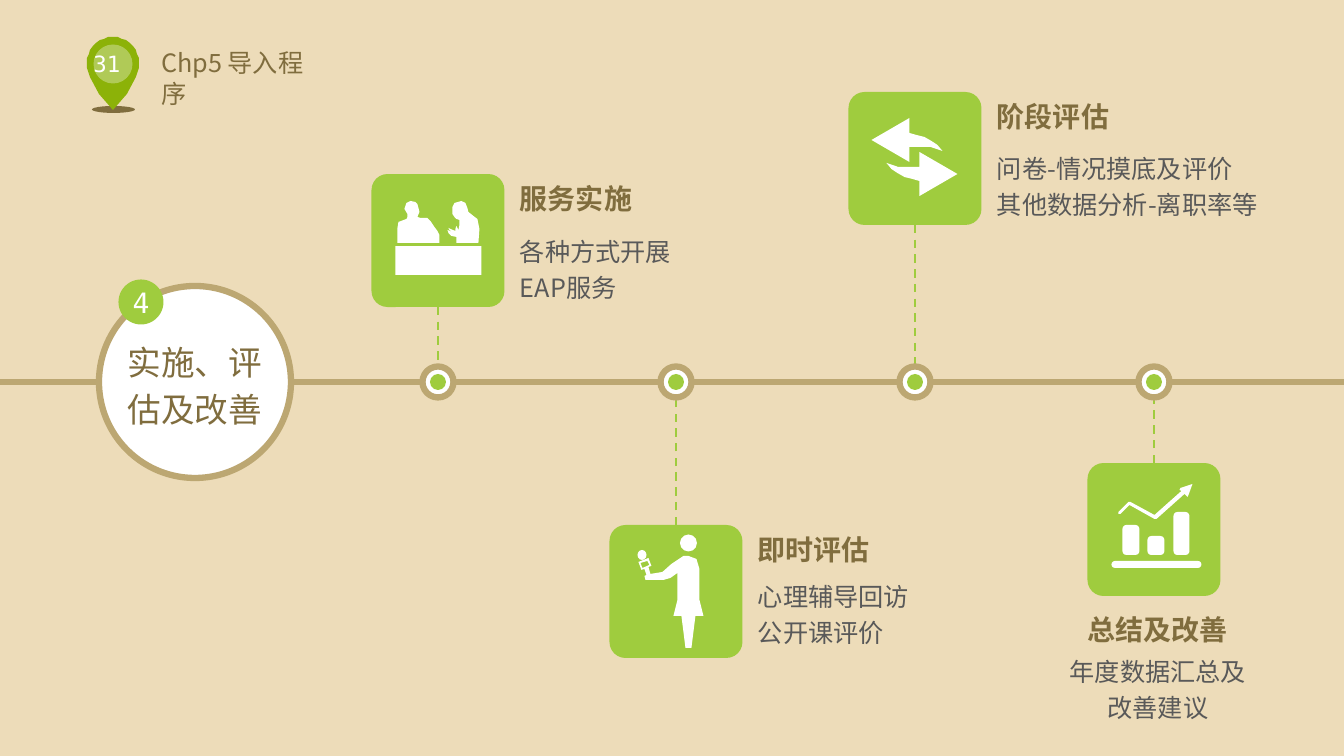
from math import cos, radians, sin

from lxml.etree import SubElement
from pptx import Presentation
from pptx.dml.color import RGBColor
from pptx.enum.dml import MSO_LINE
from pptx.enum.shapes import MSO_CONNECTOR, MSO_SHAPE
from pptx.enum.text import MSO_ANCHOR, MSO_AUTO_SIZE, PP_ALIGN
from pptx.oxml.ns import qn
from pptx.util import Pt

PX = 914400 / 100.8
WIDE, HIGH, AXIS, TILE = 1344, 756, 382, 133
SANS, MONO = "Noto Sans CJK SC", "DejaVu Sans Mono"
GREEN, TAN, BROWN, GRAY, WHITE = "9FCC3E", "BCA772", "806D3E", "595959", "FFFFFF"


def px(num):
    """Turn pixels into EMU."""
    return round(num * PX)


def paint(fill, tone):
    """Give a fill or a line fill one solid colour."""
    fill.solid()
    fill.fore_color.rgb = RGBColor.from_string(tone)


def finish(shape, tone, edge=None):
    """Fill a shape, set its outline and drop its shadow."""
    shape.shadow.inherit = False
    paint(shape.fill, tone)
    if edge:
        paint(shape.line.fill, edge)
        shape.line.width = Pt(4.5)
    else:
        shape.line.fill.background()
    return shape


def form(slide, kind, box, tone, edge=None, turn=None):
    """Add a preset shape in a pixel box, with an optional corner ratio."""
    shape = slide.shapes.add_shape(kind, *map(px, box))
    if turn is not None:
        shape.adjustments[0] = turn
    return finish(shape, tone, edge)


def disc(slide, mid_x, mid_y, size, tone, edge=None):
    """Add a circle around a centre."""
    box = (mid_x - size / 2, mid_y - size / 2, size, size)
    return form(slide, MSO_SHAPE.OVAL, box, tone, edge)


def outline(slide, left, top, tone, *loops):
    """Add a closed outline; further loops are holes."""
    pen = slide.shapes.build_freeform(*loops[0][0], scale=PX)
    pen.add_line_segments(loops[0][1:])
    for loop in loops[1:]:
        pen.move_to(*loop[0])
        pen.add_line_segments(loop[1:])
    return finish(pen.convert_to_shape(px(left), px(top)), tone)


def wire(slide, start, end, tone, width, dash=None):
    """Add a straight line between two points."""
    line = slide.shapes.add_connector(
        MSO_CONNECTOR.STRAIGHT, *map(px, start + end))
    SubElement(line._element.spPr, qn("a:effectLst"))
    paint(line.line.fill, tone)
    line.line.width = Pt(width)
    if dash:
        line.line.dash_style = dash
    return line


def write(shape, text, size, tone, font=SANS, bold=False, lead=None,
          align=PP_ALIGN.LEFT, anchor=MSO_ANCHOR.TOP, inset=None):
    """Write lines of text into a shape."""
    frame = shape.text_frame
    frame.word_wrap = True
    frame.auto_size = MSO_AUTO_SIZE.NONE
    frame.vertical_anchor = anchor
    if inset is not None:
        frame.margin_left = frame.margin_right = px(inset)
        frame.margin_top = frame.margin_bottom = px(inset)
    frame.text = text
    for para in frame.paragraphs:
        para.alignment = align
        if lead:
            para.line_spacing = Pt(lead)
        for run in para.runs:
            run.font.name, run.font.size, run.font.bold = font, Pt(size), bold
            paint(run.font.fill, tone)
            SubElement(run.font._element, qn("a:ea"), typeface=font)


def label(slide, box, text, **style):
    """Add a text box."""
    write(slide.shapes.add_textbox(*map(px, box)), text, **style)


def header(slide, left, top):
    """Place the page pin and the chapter title."""
    form(slide, MSO_SHAPE.OVAL, (left + 5, top + 69, 43, 7), BROWN)
    arc = [(26 + 26 * cos(radians(deg)), 26 + 26 * sin(radians(deg)))
           for deg in range(170, 371, 10)]
    tail = [(49, 40), (40, 57), (26, 73), (12, 57), (3, 40)]
    outline(slide, left, top, "8CB208", arc + tail)
    lens = disc(slide, left + 26, top + 27, 39, WHITE)
    tint = lens.fill._xPr.find(".//" + qn("a:srgbClr"))
    SubElement(tint, qn("a:alpha"), val="32000")
    label(slide, (left - 16, top + 8, 72, 37), "31", size=16, tone=WHITE,
          font=MONO, align=PP_ALIGN.CENTER, anchor=MSO_ANCHOR.MIDDLE)
    title = slide.shapes.title
    title.left, title.top = px(left + 64), px(top + 5)
    title.width, title.height = px(184), px(72)
    write(title, "Chp5 导入程序", size=18, tone=BROWN, lead=22)


def stage(slide, mid_x, mid_y):
    """Place the large stage circle and its number."""
    style = dict(align=PP_ALIGN.CENTER, anchor=MSO_ANCHOR.MIDDLE, inset=0)
    ring = disc(slide, mid_x, mid_y, 192, WHITE, TAN)
    write(ring, "实施、评估及改善", size=24, tone=BROWN, lead=34, **style)
    badge = disc(slide, mid_x - 54, mid_y - 80, 45, GREEN)
    write(badge, "4", size=20, tone=WHITE, font=MONO, **style)


def meeting(slide, left, top):
    """Draw two people at a desk."""
    guest = [(106, 45), (102, 42), (97, 38), (96, 34), (94, 29), (90, 27),
             (83, 29), (81, 33), (81, 40), (83, 43), (85, 45), (88, 46),
             (88, 51), (87, 56), (85, 52), (84, 55), (84, 57), (79, 55),
             (77, 54), (78, 56), (81, 58), (76, 56), (77, 59), (80, 62),
             (85, 63), (85, 69), (107, 69), (108, 55)]
    host = [(68, 61), (66, 57), (63, 53), (61, 50), (59, 47), (56, 44),
            (49, 44), (46, 43), (48, 38), (47, 34), (46, 30), (44, 28),
            (39, 27), (35, 29), (33, 35), (36, 40), (36, 43), (35, 45),
            (27, 48), (26, 54), (26, 69), (68, 69)]
    for body in (guest, host):
        outline(slide, left, top, WHITE, body)
    form(slide, MSO_SHAPE.RECTANGLE, (left + 24, top + 72, 86, 29), WHITE)


def speaker(slide, left, top):
    """Draw a person holding out a microphone."""
    body = [(90, 75), (90, 44), (87, 34), (79, 31), (74, 31), (62, 39),
            (53, 47), (41, 49), (39, 42), (42, 41), (39, 33), (29, 37),
            (32, 45), (35, 44), (37, 50), (35, 51), (36, 55), (54, 55),
            (61, 53), (68, 48), (68, 75), (64, 91), (72, 91), (76, 123),
            (82, 123), (86, 91), (94, 91)]
    hole = [(31, 38), (38, 36), (40, 40), (33, 43)]
    outline(slide, left, top, WHITE, body, hole)
    disc(slide, left + 79, top + 18, 17, WHITE)
    form(slide, MSO_SHAPE.OVAL, (left + 28, top + 25, 9, 10), WHITE)


def swap(slide, left, top):
    """Draw two opposed arrows, one the half turn of the other."""
    back = [(76, 45), (68, 43), (61, 41), (61, 26), (23, 48), (61, 70),
            (61, 55), (72, 55), (82, 55), (88, 57), (94, 59), (89, 53),
            (83, 49)]
    for arrow in (back, [(132 - x, 130 - y) for x, y in back]):
        outline(slide, left, top, WHITE, arrow)


def growth(slide, left, top):
    """Draw bars below a rising arrow."""
    for x, y, wide, high in ((35, 62, 17, 30), (60, 73, 17, 19),
                             (86, 49, 16, 43), (24, 98, 90, 7)):
        form(slide, MSO_SHAPE.ROUNDED_RECTANGLE,
             (left + x, top + y, wide, high), WHITE,
             turn=min(0.5, 4 / min(wide, high)))
    rise = [(33, 51), (42, 42), (67, 56), (69, 56), (97, 31), (100, 34),
            (101, 32), (105, 21), (93, 25), (92, 27), (94, 28), (67, 52),
            (43, 39), (41, 39), (31, 49), (31, 51)]
    outline(slide, left, top, WHITE, rise)


def step(slide, mid, top, icon, head, body, gap, wide, below=False):
    """Place one step: tile, icon, dashed link, node and text."""
    left = mid - TILE / 2
    tile = form(slide, MSO_SHAPE.ROUNDED_RECTANGLE, (left, top, TILE, TILE),
                GREEN, turn=0.12)
    icon(slide, left, top)
    over = top < AXIS
    link = wire(slide, (mid, top), (mid, AXIS + (-15 if over else 15)),
                GREEN, 1.5, MSO_LINE.DASH)
    link.begin_connect(tile, 2 if over else 0)
    disc(slide, mid, AXIS, 31, WHITE, TAN)
    disc(slide, mid, AXIS, 16, GREEN)
    text_x = mid + 4 - wide / 2 if below else mid + 72
    text_y = top + 138 if below else top - 4
    align = PP_ALIGN.CENTER if below else PP_ALIGN.LEFT
    label(slide, (text_x, text_y, wide, 50), head, size=20, tone=BROWN,
          bold=True, lead=26, align=align, anchor=MSO_ANCHOR.BOTTOM)
    label(slide, (text_x, text_y + gap, wide, 84), body, size=18, tone=GRAY,
          lead=26, align=align)


def main():
    """Build the slide and save it."""
    deck = Presentation()
    deck.slide_width, deck.slide_height = px(WIDE), px(HIGH)
    slide = deck.slides.add_slide(deck.slide_layouts[5])
    paint(slide.background.fill, "EDDCB9")
    header(slide, 87, 37)
    wire(slide, (0, AXIS), (WIDE, AXIS), TAN, 4.5)
    stage(slide, 195, AXIS)
    steps = (
        (174, meeting, "服务实施", "各种方式开展EAP服务", 55, 191),
        (525, speaker, "即时评估", "心理辅导回访\n公开课评价", 49, 210),
        (92, swap, "阶段评估", "问卷-情况摸底及评价\n其他数据分析-离职率等", 54, 323),
        (463, growth, "总结及改善", "年度数据汇总及改善建议", 44, 210, True),
    )
    for rank, parts in enumerate(steps):
        step(slide, 438 + rank * 716 // 3, *parts)
    deck.save("out.pptx")


if __name__ == "__main__":
    main()
